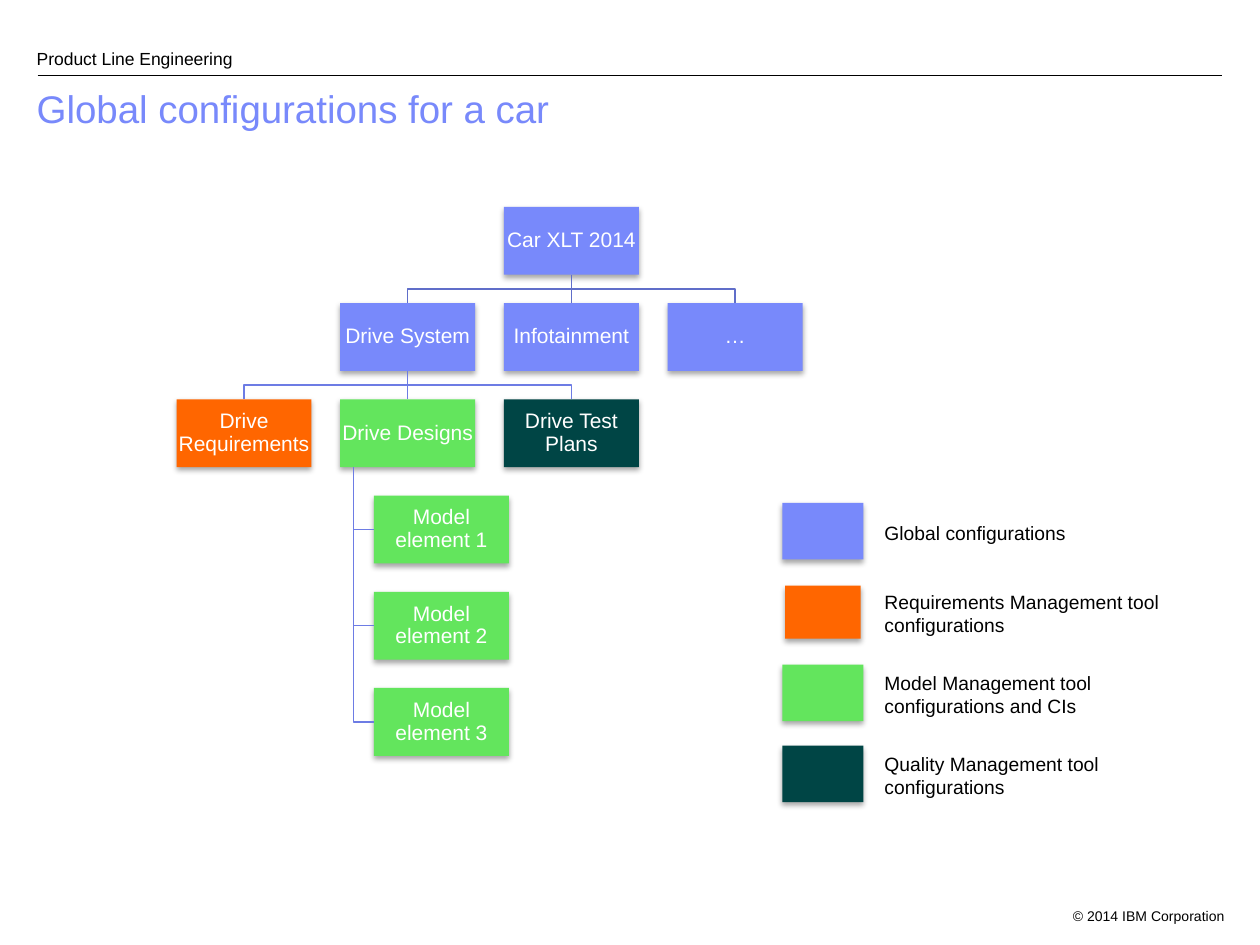
from dataclasses import dataclass

import pptx
import pptx.dml.color
import pptx.enum.shapes
import pptx.enum.text
import pptx.oxml
import pptx.oxml.ns
import pptx.oxml.xmlchemy
import pptx.util
from pptx.util import Cm

ALIGN = pptx.enum.text.PP_ALIGN
ANCHOR = pptx.enum.text.MSO_ANCHOR
RECT = pptx.enum.shapes.MSO_SHAPE.RECTANGLE
STRAIGHT = pptx.enum.shapes.MSO_CONNECTOR.STRAIGHT


@dataclass(frozen=True)
class Theme:
    font: str = "Arial"
    black: str = "000000"
    white: str = "FFFFFF"
    config: str = "7889FB"
    requirements: str = "FF6600"
    model: str = "63E55D"
    quality: str = "004545"
    root_link: str = "606EC9"
    link: str = "6D7CE4"
    title_size: float = 22
    node_size: float = 12
    legend_size: float = 11
    header_size: float = 10
    footer_size: float = 8
    line_width: float = 0.75


@dataclass(frozen=True)
class Node:
    text: str
    col: float
    row: int
    fill: str

    @property
    def left(self) -> float:
        return 3.56 + 3.3 * self.col

    @property
    def top(self) -> float:
        return 4.17 + 1.94 * self.row


@dataclass(frozen=True)
class LegendEntry:
    text: str
    fill: str
    width: float = 1.63
    height: float = 1.14


THEME = Theme()
NODE_W, NODE_H = 2.72, 1.37
INDENT = 0.68 / 3.3

CAR = Node("Car XLT 2014", 2, 0, THEME.config)
DRIVE = Node("Drive System", 1, 1, THEME.config)
SYSTEMS = [DRIVE, Node("Infotainment", 2, 1, THEME.config), Node("…", 3, 1, THEME.config)]
DESIGNS = Node("Drive Designs", 1, 2, THEME.model)
DRIVE_PARTS = [
    Node("Drive Requirements", 0, 2, THEME.requirements),
    DESIGNS,
    Node("Drive Test Plans", 2, 2, THEME.quality),
]
ELEMENTS = [Node(f"Model element {i}", 1 + INDENT, 2 + i, THEME.model) for i in (1, 2, 3)]
LEGEND = [
    LegendEntry("Global configurations", THEME.config),
    LegendEntry("Requirements Management tool configurations", THEME.requirements, 1.52, 1.07),
    LegendEntry("Model Management tool configurations and CIs", THEME.model),
    LegendEntry("Quality Management tool configurations", THEME.quality),
]


def rgb(color: str) -> pptx.dml.color.RGBColor:
    return pptx.dml.color.RGBColor.from_string(color)


def write(sp, text: str, size: float, color: str, align=ALIGN.LEFT, anchor=ANCHOR.TOP,
          inset_x: float = 0, inset_y: float = 0.13, spacing: float = 1.0) -> None:
    tf = sp.text_frame
    tf.text = text
    tf.word_wrap = True
    tf.vertical_anchor = anchor
    tf.margin_left = tf.margin_right = Cm(inset_x)
    tf.margin_top = tf.margin_bottom = Cm(inset_y)
    p = tf.paragraphs[0]
    p.alignment = align
    p.line_spacing = spacing
    r = p.runs[0]
    r.font.name = THEME.font
    r.font.size = pptx.util.Pt(size)
    r.font.color.rgb = rgb(color)


def add_text(s, left: float, top: float, width: float, height: float):
    return s.shapes.add_textbox(Cm(left), Cm(top), Cm(width), Cm(height))


def add_box(s, left: float, top: float, width: float, height: float, fill: str):
    sp = s.shapes.add_shape(RECT, Cm(left), Cm(top), Cm(width), Cm(height))
    sp.fill.solid()
    sp.fill.fore_color.rgb = rgb(fill)
    sp.line.fill.background()
    sp.shadow.inherit = False
    effects = sp._element.spPr.find(pptx.oxml.ns.qn("a:effectLst"))
    effects.append(pptx.oxml.parse_xml(
        f'<a:outerShdw {pptx.oxml.ns.nsdecls("a")} blurRad="40000" dist="23000" '
        f'dir="5400000" rotWithShape="0"><a:srgbClr val="{THEME.black}">'
        '<a:alpha val="35000"/></a:srgbClr></a:outerShdw>'))
    return sp


def add_node(s, node: Node):
    sp = add_box(s, node.left, node.top, NODE_W, NODE_H, node.fill)
    write(sp, node.text, THEME.node_size, THEME.white, ALIGN.CENTER, ANCHOR.MIDDLE,
          0.03, 0.03, 0.9)
    return sp


def style_line(line, color: str) -> None:
    line.color.rgb = rgb(color)
    line.width = pptx.util.Pt(THEME.line_width)


def add_line(s, start: tuple[float, float], end: tuple[float, float], color: str):
    cxn = s.shapes.add_connector(STRAIGHT, *map(Cm, start + end))
    style_line(cxn.line, color)
    cxn._element.spPr.append(pptx.oxml.xmlchemy.OxmlElement("a:effectLst"))
    return cxn


def add_bent_line(s, points: list[tuple[float, float]], color: str) -> None:
    start, *rest = [(Cm(x), Cm(y)) for x, y in points]
    builder = s.shapes.build_freeform(*start)
    builder.add_line_segments(rest, close=False)
    sp = builder.convert_to_shape()
    sp.fill.background()
    sp.shadow.inherit = False
    style_line(sp.line, color)


def link_below(s, parent: Node, children: list[Node], boxes: dict, color: str) -> None:
    x, y = parent.left + NODE_W / 2, parent.top + NODE_H
    for child in children:
        end_x, end_y = child.left + NODE_W / 2, child.top
        if child.col == parent.col:
            cxn = add_line(s, (x, y), (end_x, end_y), color)
            cxn.begin_connect(boxes[parent], 2)
            cxn.end_connect(boxes[child], 0)
        else:
            mid = (y + end_y) / 2
            add_bent_line(s, [(x, y), (x, mid), (end_x, mid), (end_x, end_y)], color)


def link_hanging(s, parent: Node, children: list[Node], color: str) -> None:
    x, y = parent.left + NODE_W / 10, parent.top + NODE_H
    for child in children:
        mid = child.top + NODE_H / 2
        add_bent_line(s, [(x, y), (x, mid), (child.left, mid)], color)


def add_legend(s) -> None:
    for i, entry in enumerate(LEGEND):
        center = 10.71 + 1.63 * i
        add_box(s, 16.59 - entry.width / 2, center - entry.height / 2,
                entry.width, entry.height, entry.fill)
        write(add_text(s, 17.58, center - 0.57, 6.65, 1.2), entry.text, THEME.legend_size,
              THEME.black, anchor=ANCHOR.MIDDLE, inset_x=0.25)


def main() -> None:
    prs = pptx.Presentation()
    prs.slide_width, prs.slide_height = Cm(25.4), Cm(19.05)
    s = prs.slides.add_slide(prs.slide_layouts[6])

    add_line(s, (0.76, 1.52), (24.64, 1.52), THEME.black)
    write(add_text(s, 20.88, 18.16, 3.81, 0.51), "© 2014 IBM Corporation",
          THEME.footer_size, THEME.black, ALIGN.RIGHT)
    write(add_text(s, 0.74, 0.38, 21.59, 1.02), "Product Line Engineering",
          THEME.header_size, THEME.black, anchor=ANCHOR.BOTTOM, inset_y=0)
    write(add_text(s, 0.74, 1.7, 23.95, 1.12), "Global configurations for a car",
          THEME.title_size, THEME.config, spacing=0.9)

    boxes = {node: add_node(s, node) for node in [CAR, *SYSTEMS, *DRIVE_PARTS, *ELEMENTS]}
    link_below(s, CAR, SYSTEMS, boxes, THEME.root_link)
    link_below(s, DRIVE, DRIVE_PARTS, boxes, THEME.link)
    link_hanging(s, DESIGNS, ELEMENTS, THEME.link)
    add_legend(s)
    prs.save("out.pptx")


if __name__ == "__main__":
    main()
